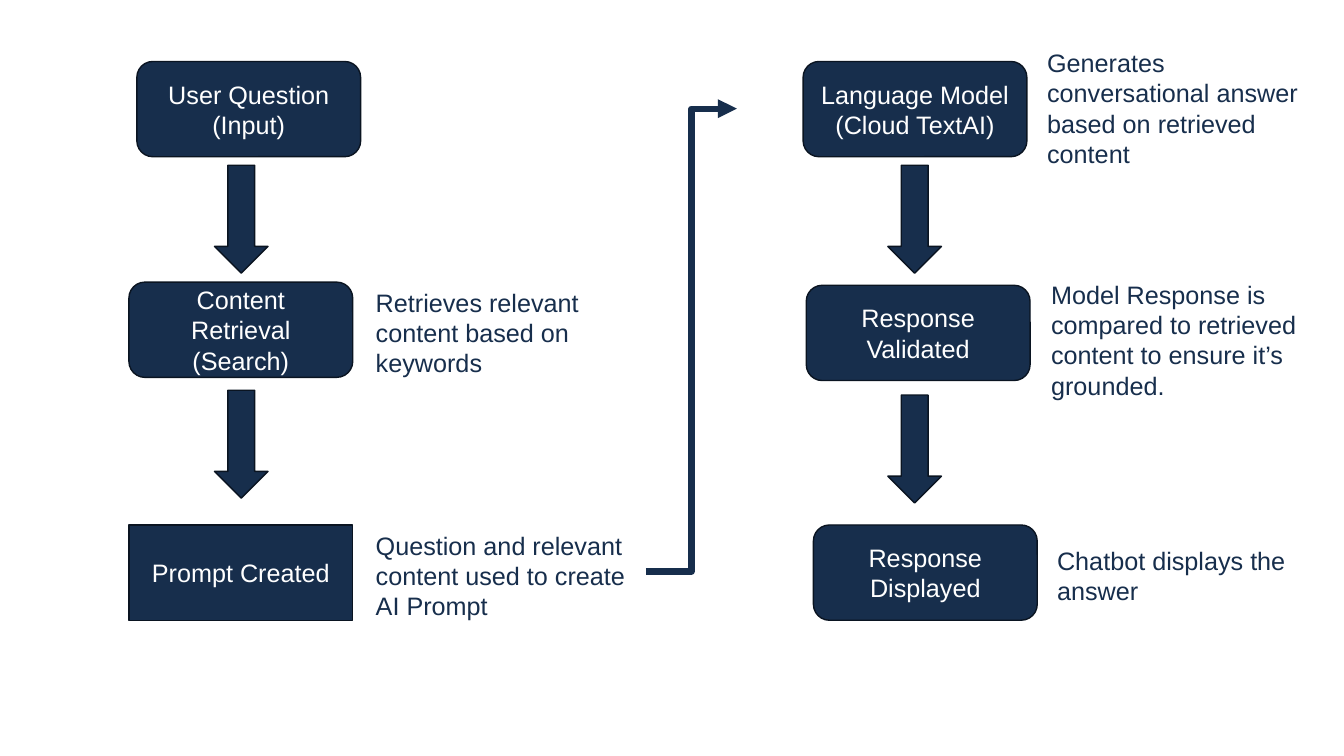
"""Build a slide showing the flow from a user question to a validated chatbot answer."""
from dataclasses import dataclass

from lxml import etree
from pptx import Presentation
from pptx.dml.color import RGBColor
from pptx.enum import shapes, text
from pptx.oxml.ns import qn
from pptx.util import Cm, Pt


@dataclass(frozen=True)
class Theme:
    """Colours, font and sizes of the slide."""
    navy: RGBColor = RGBColor(0x17, 0x2E, 0x4C)
    edge: RGBColor = RGBColor(0x0A, 0x14, 0x21)
    white: RGBColor = RGBColor(0xFF, 0xFF, 0xFF)
    font: str = "Arial"
    size: float = 18
    edge_width: float = 1
    link_width: float = 4.5


@dataclass(frozen=True)
class Step:
    """A labelled box of the flow, placed in centimetres."""
    label: str
    x: float
    y: float
    kind: shapes.MSO_SHAPE = shapes.MSO_SHAPE.ROUNDED_RECTANGLE


@dataclass(frozen=True)
class Note:
    """An explanation beside a box, placed in centimetres."""
    words: str
    x: float
    y: float
    h: float
    w: float = 7.62


THEME = Theme()
STEP_W, STEP_H = 5.64, 2.4
ARROW_W, ARROW_H = 2.72, 1.35
STEPS = [
    Step("User Question (Input)", 3.45, 1.55),
    Step("Content Retrieval (Search)", 3.25, 7.11),
    Step("Prompt Created", 3.25, 13.23, shapes.MSO_SHAPE.RECTANGLE),
    Step("Language Model (Cloud TextAI)", 20.24, 1.55),
    Step("Response Validated", 20.32, 7.19),
    Step("Response Displayed", 20.5, 13.23),
]
NOTES = [
    Note("Retrieves relevant content based on keywords", 9.22, 7.11, 2.57, 6.17),
    Note("Question and relevant content used to create\nAI Prompt", 9.22, 13.23, 2.57),
    Note("Generates conversational answer based on retrieved content", 26.14, 1.07, 3.33),
    Note("Model Response is compared to retrieved content to ensure it’s grounded.",
         26.24, 6.91, 3.33),
    Note("Chatbot displays the answer", 26.39, 13.61, 1.8),
]
ARROWS = [(4.72, 4.85), (4.72, 10.52), (21.69, 4.85), (21.69, 10.64)]


def write(tf, words: str, *, color: RGBColor, align=text.PP_ALIGN.LEFT,
          anchor=text.MSO_ANCHOR.TOP) -> None:
    """Fill a text frame with one formatted paragraph."""
    tf.word_wrap = True
    tf.vertical_anchor = anchor
    p = tf.paragraphs[0]
    p.text = words
    p.alignment = align
    for r in p.runs:
        r.font.name = THEME.font
        r.font.size = Pt(THEME.size)
        r.font.color.rgb = color


def add_solid(s, kind: shapes.MSO_SHAPE, x: float, y: float, w: float, h: float):
    """Add a navy preset shape with a thin dark edge."""
    sp = s.shapes.add_shape(kind, Cm(x), Cm(y), Cm(w), Cm(h))
    sp.shadow.inherit = False
    sp.fill.solid()
    sp.fill.fore_color.rgb = THEME.navy
    sp.line.color.rgb = THEME.edge
    sp.line.width = Pt(THEME.edge_width)
    return sp


def add_step(s, step: Step) -> None:
    """Add a box with its centred label."""
    sp = add_solid(s, step.kind, step.x, step.y, STEP_W, STEP_H)
    write(sp.text_frame, step.label, color=THEME.white,
          align=text.PP_ALIGN.CENTER, anchor=text.MSO_ANCHOR.MIDDLE)


def add_note(s, note: Note) -> None:
    """Add an explanation as a text box."""
    sp = s.shapes.add_textbox(Cm(note.x), Cm(note.y), Cm(note.w), Cm(note.h))
    write(sp.text_frame, note.words, color=THEME.navy)


def add_arrow(s, x: float, y: float) -> None:
    """Add a block arrow turned to point down."""
    add_solid(s, shapes.MSO_SHAPE.RIGHT_ARROW, x, y, ARROW_W, ARROW_H).rotation = 90


def add_link(s, x1: float, y1: float, x2: float, y2: float) -> None:
    """Add an elbow connector with an arrowhead at its end."""
    c = s.shapes.add_connector(shapes.MSO_CONNECTOR.ELBOW, Cm(x1), Cm(y1), Cm(x2), Cm(y2))
    c.line.color.rgb = THEME.navy
    c.line.width = Pt(THEME.link_width)
    etree.SubElement(c.line._get_or_add_ln(), qn("a:tailEnd"), type="triangle")
    etree.SubElement(c._element.spPr, qn("a:effectLst"))


def main() -> None:
    """Draw the slide and save it."""
    prs = Presentation()
    prs.slide_width, prs.slide_height = Cm(33.87), Cm(19.05)
    s = prs.slides.add_slide(prs.slide_layouts[6])
    for step in STEPS:
        add_step(s, step)
    for note in NOTES:
        add_note(s, note)
    for x, y in ARROWS:
        add_arrow(s, x, y)
    add_link(s, 16.28, 14.4, 18.57, 2.74)
    prs.save("out.pptx")


if __name__ == "__main__":
    main()
